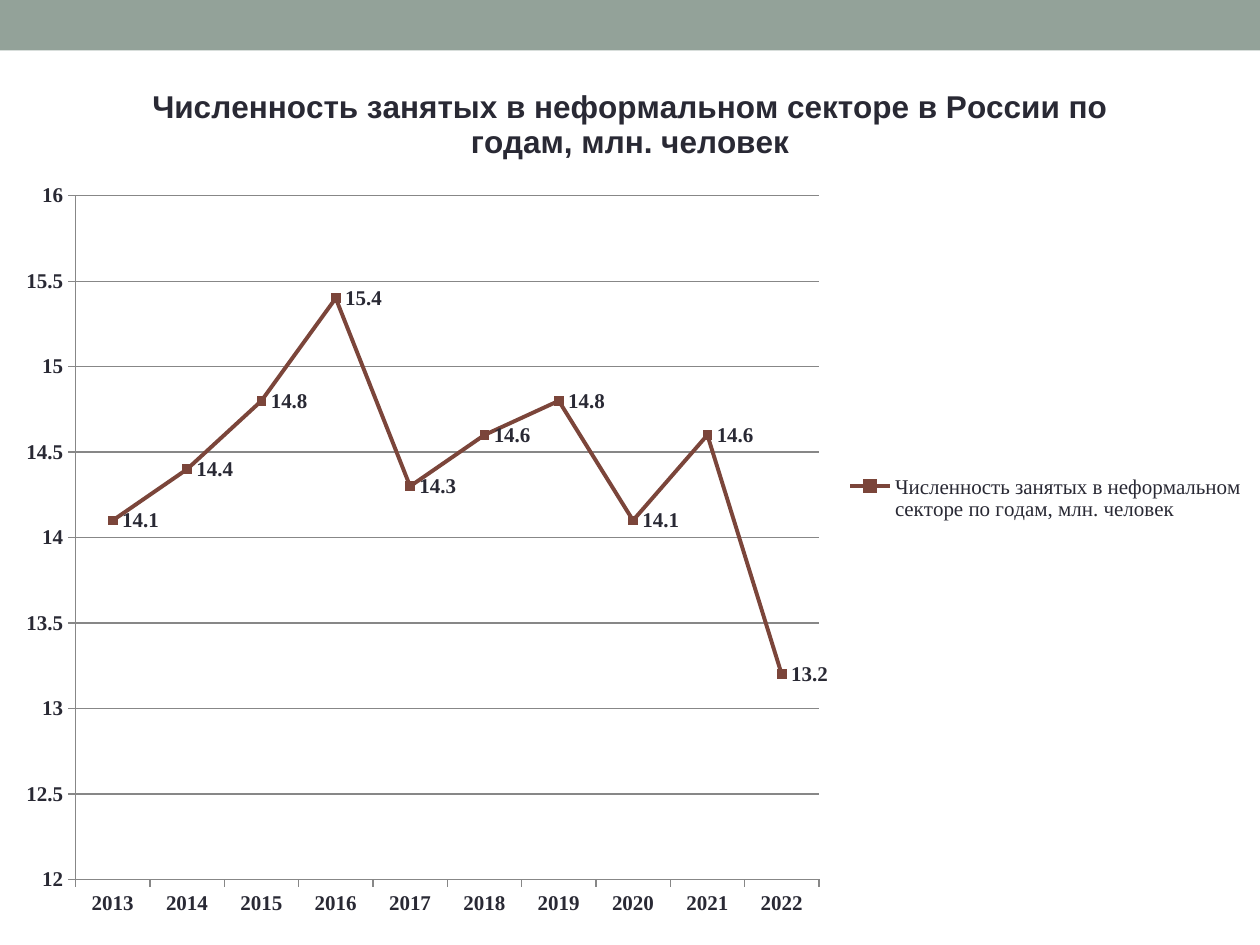
from dataclasses import dataclass

from lxml import etree
from pptx import Presentation
from pptx.chart.data import CategoryChartData
from pptx.dml.color import RGBColor
from pptx.enum.chart import (XL_CHART_TYPE, XL_LABEL_POSITION,
                             XL_LEGEND_POSITION, XL_MARKER_STYLE,
                             XL_TICK_MARK)
from pptx.enum.shapes import MSO_SHAPE
from pptx.oxml.ns import qn
from pptx.util import Pt

LINE = XL_CHART_TYPE.LINE_MARKERS_STACKED
RECTANGLE = MSO_SHAPE.RECTANGLE
LEGEND_RIGHT = XL_LEGEND_POSITION.RIGHT
LABEL_RIGHT = XL_LABEL_POSITION.RIGHT
SQUARE = XL_MARKER_STYLE.SQUARE
TICK_OUT = XL_TICK_MARK.OUTSIDE
TICK_NONE = XL_TICK_MARK.NONE

TITLE = "Численность занятых в неформальном секторе в России по годам, млн. человек"
SERIES = "Численность занятых в неформальном секторе по годам, млн. человек"
YEARS = [str(year) for year in range(2013, 2023)]
MILLIONS = [14.1, 14.4, 14.8, 15.4, 14.3, 14.6, 14.8, 14.1, 14.6, 13.2]


@dataclass(frozen=True)
class Theme:
    band: RGBColor = RGBColor(0x93, 0xA2, 0x99)
    text: RGBColor = RGBColor(0x29, 0x29, 0x34)
    line: RGBColor = RGBColor(0x7B, 0x45, 0x3A)
    grid: RGBColor = RGBColor(0x87, 0x87, 0x87)
    title_font: str = "Arial"
    chart_font: str = "Times New Roman"
    title_size: Pt = Pt(18)
    chart_size: Pt = Pt(12)


THEME = Theme()
TITLE_FORMAT = {"name": THEME.title_font, "size": THEME.title_size, "bold": True}
LEGEND_FORMAT = {"name": THEME.chart_font, "size": THEME.chart_size, "bold": False}
LABEL_FORMAT = {**LEGEND_FORMAT, "bold": True}


def set_attributes(obj, values):
    for name, value in values.items():
        setattr(obj, name, value)


def format_font(font, values):
    set_attributes(font, values)
    font.color.rgb = THEME.text


def format_line(line, color, width):
    line.color.rgb = color
    line.width = Pt(width)


def place(element, index, x, y, w, h, inner=False):
    """Give a chart part a manual layout in fractions of the chart."""
    for old in element.findall(qn("c:layout")):
        element.remove(old)
    layout = etree.Element(qn("c:layout"))
    manual = etree.SubElement(layout, qn("c:manualLayout"))
    values = {"layoutTarget": "inner"} if inner else {}
    values.update(xMode="edge", yMode="edge", x=x, y=y, w=w, h=h)
    for name, value in values.items():
        etree.SubElement(manual, qn(f"c:{name}")).set("val", str(value))
    element.insert(index, layout)


def add_band(slide):
    s = slide.shapes.add_shape(RECTANGLE, 0, 0, Pt(720), Pt(28.8))
    s.shadow.inherit = False
    s.fill.solid()
    s.fill.fore_color.rgb = THEME.band
    s.line.fill.background()


def add_line_chart(slide):
    data = CategoryChartData()
    data.categories = YEARS
    data.add_series(SERIES, MILLIONS)
    chart = slide.shapes.add_chart(
        LINE, 0, Pt(31.7), Pt(720), Pt(501), data).chart
    format_font(chart.font, LEGEND_FORMAT)
    place(chart.plots[0]._element.getparent(), 0, 0.06, 0.16, 0.59, 0.78, inner=True)
    return chart


def add_title(chart):
    chart.has_title = True
    p = chart.chart_title.text_frame.paragraphs[0]
    r = p.add_run()
    r.text = TITLE
    format_font(r.font, TITLE_FORMAT)


def format_axes(chart):
    for axis in (chart.category_axis, chart.value_axis):
        set_attributes(axis, {"major_tick_mark": TICK_OUT, "minor_tick_mark": TICK_NONE})
        format_font(axis.tick_labels.font, LABEL_FORMAT)
        format_line(axis.format.line, THEME.grid, 0.75)
    axis = chart.value_axis
    set_attributes(axis, {"minimum_scale": 12, "maximum_scale": 16,
                          "major_unit": 0.5, "has_major_gridlines": True})
    format_line(axis.major_gridlines.format.line, THEME.grid, 0.75)


def format_series(chart):
    plot = chart.plots[0]
    plot.vary_by_categories = False
    series = plot.series[0]
    series.smooth = False
    format_line(series.format.line, THEME.line, 2.25)
    marker = series.marker
    set_attributes(marker, {"style": SQUARE, "size": 5})
    marker.format.fill.solid()
    marker.format.fill.fore_color.rgb = THEME.line
    format_line(marker.format.line, THEME.line, 0.75)
    labels = series.data_labels
    set_attributes(labels, {"show_value": True, "position": LABEL_RIGHT})
    format_font(labels.font, LABEL_FORMAT)


def add_legend(chart):
    chart.has_legend = True
    legend = chart.legend
    set_attributes(legend, {"position": LEGEND_RIGHT, "include_in_layout": False})
    format_font(legend.font, LEGEND_FORMAT)
    place(legend._element, 1, 0.67, 0.47, 0.32, 0.07)


def main():
    prs = Presentation()
    set_attributes(prs, {"slide_width": Pt(720), "slide_height": Pt(540)})
    slide = prs.slides.add_slide(prs.slide_layouts[6])
    add_band(slide)
    chart = add_line_chart(slide)
    for step in (add_title, format_axes, format_series, add_legend):
        step(chart)
    prs.save("out.pptx")


if __name__ == "__main__":
    main()
